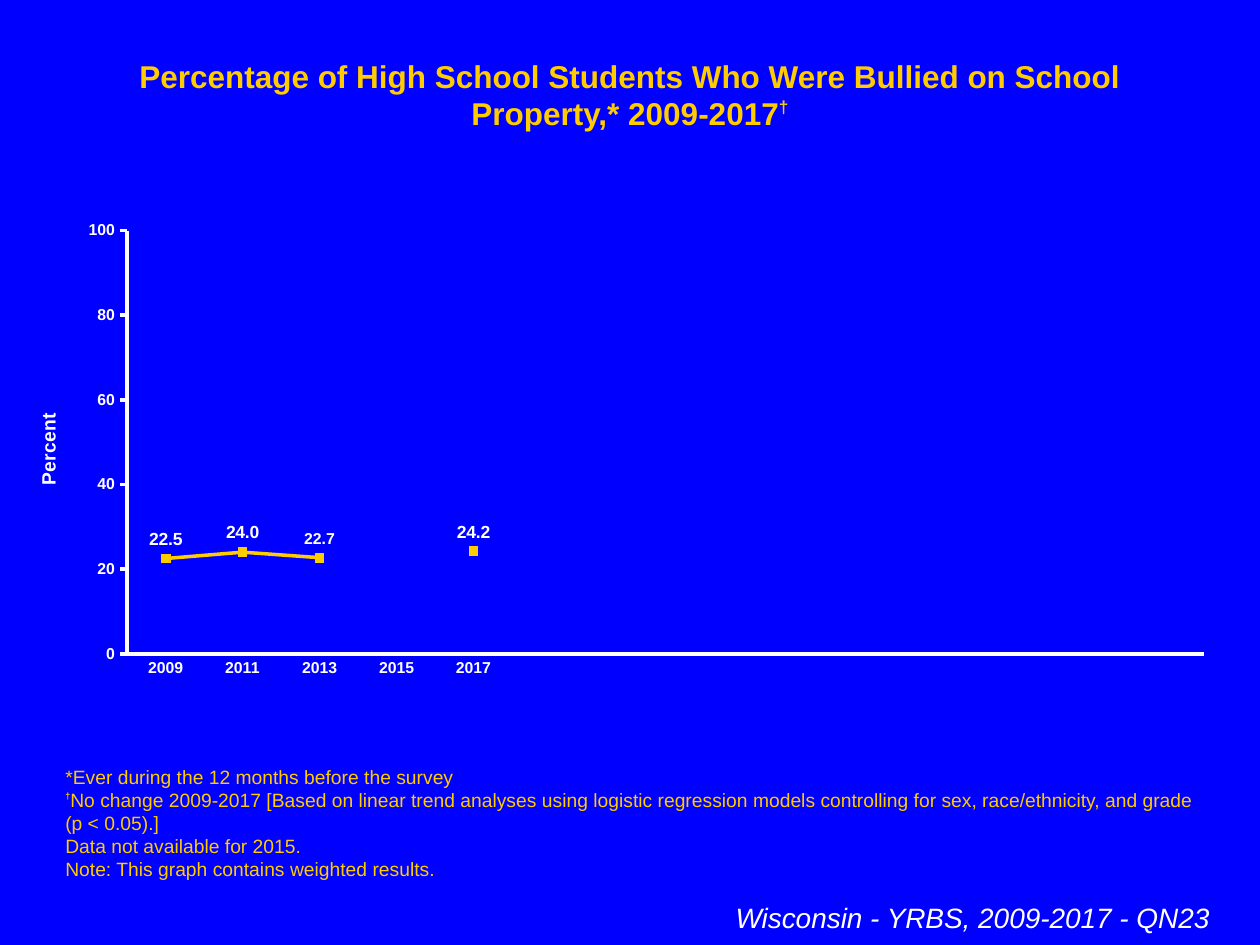
from lxml import etree
from pptx import Presentation
from pptx.chart.data import CategoryChartData
from pptx.dml.color import RGBColor
from pptx.enum.chart import XL_CHART_TYPE as ChartType, XL_LABEL_POSITION as LabelPos
from pptx.enum.chart import XL_MARKER_STYLE as Marker, XL_TICK_MARK as Tick
from pptx.enum.text import MSO_ANCHOR as Anchor, MSO_AUTO_SIZE as AutoSize, PP_ALIGN as Align
from pptx.oxml.ns import qn
from pptx.util import Inches, Pt

BLUE, GOLD, WHITE = "0000FF", "FFCC00", "FFFFFF"


def color(hex_value):
    return RGBColor.from_string(hex_value)


def set_font(font, size, hex_value, bold=False, italic=False):
    style = {"name": "Arial", "size": Pt(size), "bold": bold, "italic": italic}
    for key, value in style.items():
        setattr(font, key, value)
    font.color.rgb = color(hex_value)


prs = Presentation()
prs.slide_width, prs.slide_height = Inches(10), Inches(7.5)
slide = prs.slides.add_slide(prs.slide_layouts[6])
slide.background.fill.solid()
slide.background.fill.fore_color.rgb = color(BLUE)

# Title, footnotes and source line; a run is text, size, raise in percent
title = [[("Percentage of High School Students Who Were Bullied on School Property,* 2009-2017", 18, 0),
          ("†", 17, 40)]]
footnotes = [
    [("*Ever during the 12 months before the survey", 11, 0)],
    [("†", 9, 50),
     ("No change 2009-2017 [Based on linear trend analyses using logistic regression models "
      "controlling for sex, race/ethnicity, and grade (p < 0.05).]", 11, 0)],
    [("Data not available for 2015.", 11, 0)],
    [("Note: This graph contains weighted results.", 11, 0)],
]
survey = [[("Wisconsin - YRBS, 2009-2017 - QN23", 16, 0)]]

for place, lines, align, anchor, hex_value, bold, italic in [
    ((0.5, 0.4, 9, 0.4), title, Align.CENTER, Anchor.TOP, GOLD, True, False),
    ((0.42, 6.75, 9.17, 0.29), footnotes, Align.LEFT, Anchor.BOTTOM, GOLD, False, False),
    ((0.42, 7.1, 9.28, 0.37), survey, Align.RIGHT, Anchor.TOP, WHITE, False, True),
]:
    frame = slide.shapes.add_textbox(*map(Inches, place)).text_frame
    frame.word_wrap = True
    frame.auto_size = AutoSize.SHAPE_TO_FIT_TEXT
    frame.vertical_anchor = anchor
    for number, line in enumerate(lines):
        paragraph = frame.add_paragraph() if number else frame.paragraphs[0]
        paragraph.alignment = align
        for text, size, raised in line:
            run = paragraph.add_run()
            run.text = text
            set_font(run.font, size, hex_value, bold or raised == 50, italic)
            if raised:
                run._r.get_or_add_rPr().set("baseline", str(raised * 1000))

# Line chart; the empty categories keep room for later survey years
years = ["2009", "2011", "2013", "2015", "2017"]
percents = [22.5, 24.0, 22.7, None, 24.2]
spare = 9
bullied = CategoryChartData(number_format="#,##0.0")
bullied.categories = years + [""] * spare
bullied.add_series("Series 1", percents + [None] * spare)
chart = slide.shapes.add_chart(ChartType.LINE_MARKERS, Inches(0.25), Inches(1.67),
                               Inches(9.5), Inches(4), bullied).chart
chart.has_legend = False
chart.has_title = False
set_font(chart.font, 18, WHITE)

# Axes
for axis, tick in [(chart.category_axis, Tick.NONE), (chart.value_axis, Tick.OUTSIDE)]:
    axis.has_major_gridlines = False
    axis.major_tick_mark = tick
    axis.minor_tick_mark = Tick.NONE
    axis.format.line.color.rgb = color(WHITE)
    axis.format.line.width = Pt(2)
    set_font(axis.tick_labels.font, 9, WHITE, bold=True)

percent_axis = chart.value_axis
for key, value in {"minimum_scale": 0, "maximum_scale": 100, "major_unit": 20}.items():
    setattr(percent_axis, key, value)
percent_axis.tick_labels.number_format = "#,##0"
percent_axis.tick_labels.number_format_is_linked = False
axis_title = percent_axis.axis_title.text_frame
axis_title.text = "Percent"
set_font(axis_title.paragraphs[0].runs[0].font, 11, WHITE, bold=True)

# Trend line, markers and value labels
trend = chart.plots[0].series[0]
chart.plots[0].vary_by_categories = False
trend.smooth = False
trend.format.line.color.rgb = color(GOLD)
trend.format.line.width = Pt(2)
trend.marker.style = Marker.SQUARE
trend.marker.size = 5
trend.marker.format.fill.solid()
trend.marker.format.fill.fore_color.rgb = color(GOLD)
trend.marker.format.line.color.rgb = color(GOLD)

labels = trend.data_labels
for key, value in {"show_value": True, "position": LabelPos.ABOVE,
                   "number_format": "#,##0.0", "number_format_is_linked": False}.items():
    setattr(labels, key, value)
set_font(labels.font, 10, WHITE, bold=True)
label_2013 = trend.points[2].data_label
set_font(label_2013.font, 9, WHITE, bold=True)
label_2013.position = LabelPos.ABOVE

# Fixed place of the plot area inside the chart
plot_area = chart._chartSpace.chart.plotArea
for old in plot_area.findall(qn("c:layout")):
    plot_area.remove(old)
layout = etree.Element(qn("c:layout"))
manual = etree.SubElement(layout, qn("c:manualLayout"))
for tag, value in {"layoutTarget": "inner", "xMode": "edge", "yMode": "edge",
                   "x": 0.08, "y": 0.04, "w": 0.9, "h": 0.84}.items():
    etree.SubElement(manual, qn("c:" + tag)).set("val", str(value))
plot_area.insert(0, layout)

prs.save("out.pptx")
